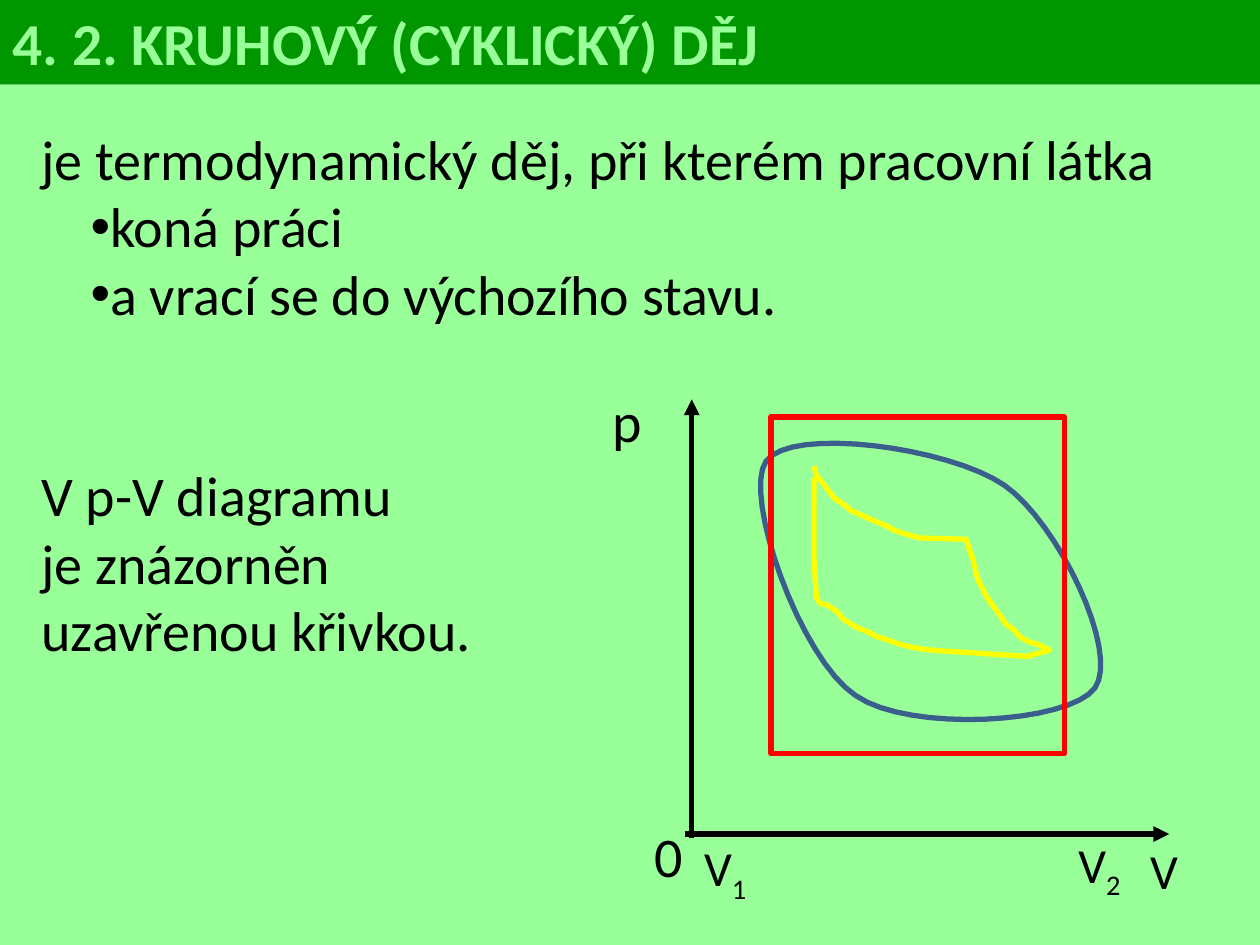
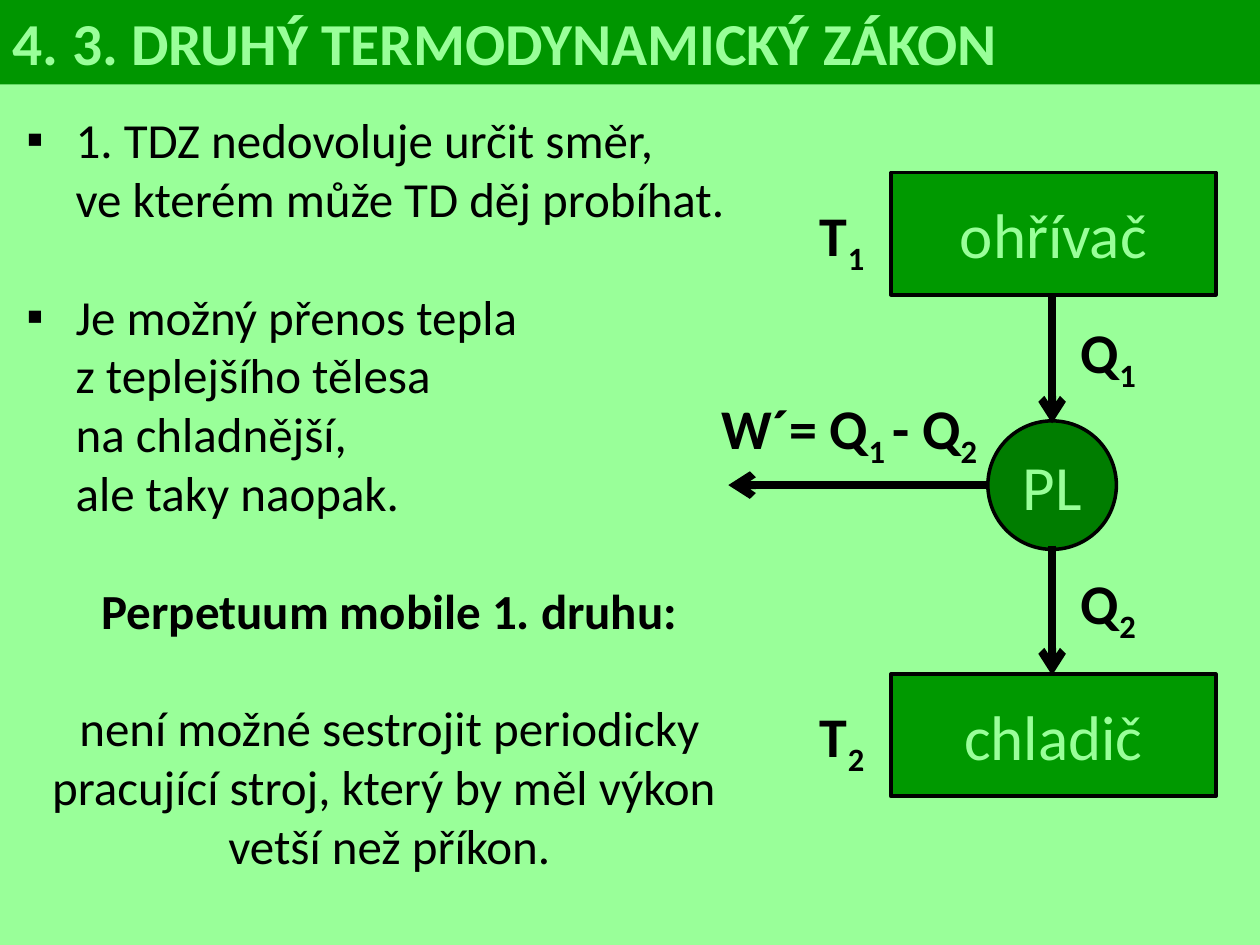
from copy import deepcopy
from dataclasses import dataclass

from lxml.etree import SubElement
from pptx import Presentation
from pptx.dml.color import RGBColor
from pptx.enum.shapes import MSO_CONNECTOR, MSO_SHAPE
from pptx.enum.text import MSO_ANCHOR, MSO_AUTO_SIZE, PP_ALIGN
from pptx.oxml.ns import qn
from pptx.util import Inches, Pt


@dataclass(frozen=True)
class Theme:
    font: str = "Calibri"
    light: str = "99FF99"
    band: str = "009600"
    box: str = "009900"
    circle: str = "007D00"
    ink: str = "000000"
    red: str = "FF0000"
    blue: str = "3A5F8C"
    yellow: str = "FFFF00"
    title: int = 34
    node: int = 36
    large: int = 32
    medium: int = 28
    leading: float = 1.2


def rgb(value):
    return RGBColor.from_string(value)


def bezier(start, curves, steps=16):
    """Points along a chain of cubic curves."""
    points = [start]
    for a, b, end in curves:
        for i in range(1, steps + 1):
            t = i / steps
            u = 1 - t
            points.append(tuple(
                u**3 * w + 3 * u * u * t * x + 3 * u * t * t * y + t**3 * z
                for w, x, y, z in zip(start, a, b, end)))
        start = end
    return points


class Deck:
    def __init__(self, theme):
        self.theme = theme
        self.prs = Presentation()
        self.prs.slide_width, self.prs.slide_height = Inches(10), Inches(7.5)
        fill = self.prs.slide_master.background.fill
        fill.solid()
        fill.fore_color.rgb = rgb(theme.light)
        self.s = None

    def style(self, p, size, color, bold=False):
        for r in p.runs:
            r.font.name, r.font.size, r.font.bold = self.theme.font, Pt(size), bold
            r.font.color.rgb = rgb(color)
        # Line breaks take the size of the text around them
        for br in p._p.findall(qn("a:br")):
            br.append(deepcopy(p.runs[0]._r.rPr))

    def outline(self, sp, color, width):
        sp.shadow.inherit = False
        sp.line.color.rgb = rgb(color)
        sp.line.width = Pt(width)

    def place(self, sp, left, top, width, height):
        sp.left, sp.top = Inches(left), Inches(top)
        sp.width, sp.height = Inches(width), Inches(height)
        tf = sp.text_frame
        tf.word_wrap, tf.auto_size = True, MSO_AUTO_SIZE.NONE
        tf.vertical_anchor = MSO_ANCHOR.TOP
        return tf

    def new_slide(self, title):
        self.s = self.prs.slides.add_slide(self.prs.slide_layouts[1])
        sp = self.s.shapes.title
        tf = self.place(sp, 0, 0, 10, 0.67)
        sp.fill.solid()
        sp.fill.fore_color.rgb = rgb(self.theme.band)
        tf.text = title
        p = tf.paragraphs[0]
        p.alignment = PP_ALIGN.LEFT
        self.style(p, self.theme.title, self.theme.light, True)

    def body(self, box, size, items):
        """Items: text, bullet, (left margin, first-line indent), lines before, options."""
        tf = self.place(self.s.placeholders[1], *box)
        for i, (text, bullet, indents, gap, options) in enumerate(items):
            p = tf.add_paragraph() if i else tf.paragraphs[0]
            p.text = text
            p.alignment = options.get("align", PP_ALIGN.LEFT)
            p.space_before = Pt(gap * size * self.theme.leading)
            pPr = p._p.get_or_add_pPr()
            for name, value in zip(("marL", "indent"), indents):
                pPr.set(name, str(Inches(value)))
            if bullet:
                SubElement(pPr, qn("a:buChar"), char=bullet)
            else:
                SubElement(pPr, qn("a:buNone"))
            self.style(p, size, self.theme.ink, options.get("bold", False))

    def label(self, text, left, top, width, size, bold=False):
        """Text between underscores is set as a subscript."""
        height = 0.1 + size * self.theme.leading / 72
        sp = self.s.shapes.add_textbox(0, 0, 0, 0)
        p = self.place(sp, left, top, width, height).paragraphs[0]
        for i, part in enumerate(text.split("_")):
            r = p.add_run()
            r.text = part
            if i % 2:
                r._r.get_or_add_rPr().set("baseline", "-25000")
        self.style(p, size, self.theme.ink, bold)

    def shape(self, kind, left, top, width, height, line, weight, fill=None, text=""):
        sp = self.s.shapes.add_shape(kind, 0, 0, 0, 0)
        tf = self.place(sp, left, top, width, height)
        self.outline(sp, line, weight)
        if fill:
            sp.fill.solid()
            sp.fill.fore_color.rgb = rgb(fill)
        else:
            sp.fill.background()
        if text:
            tf.text = text
            tf.vertical_anchor = MSO_ANCHOR.MIDDLE
            p = tf.paragraphs[0]
            p.alignment = PP_ALIGN.CENTER
            self.style(p, self.theme.node, self.theme.light)

    def node(self, kind, text, left, top, width, height, fill):
        self.shape(kind, left, top, width, height, self.theme.ink, 2, fill, text)

    def arrow(self, x1, y1, x2, y2, weight, head):
        c = self.s.shapes.add_connector(
            MSO_CONNECTOR.STRAIGHT, Inches(x1), Inches(y1), Inches(x2), Inches(y2))
        c.line.color.rgb = rgb(self.theme.ink)
        c.line.width = Pt(weight)
        SubElement(c.line._get_or_add_ln(), qn("a:tailEnd"), type=head)
        SubElement(c._element.spPr, qn("a:effectLst"))

    def curve(self, points, color, close):
        points = [(Inches(x), Inches(y)) for x, y in points]
        builder = self.s.shapes.build_freeform(*points[0])
        builder.add_line_segments(points[1:], close=close)
        sp = builder.convert_to_shape()
        sp.fill.background()
        self.outline(sp, color, 3)


def cyclic_process(deck):
    t = deck.theme
    deck.new_slide("4. 2. KRUHOVÝ (CYKLICKÝ) DĚJ")
    deck.body((0.23, 0.94, 9.2, 4.95), t.large, [
        ("je termodynamický děj, při kterém pracovní látka", "", (0, 0), 0, {}),
        ("koná práci", "•", (0, 0.39), 0, {}),
        ("a vrací se do výchozího stavu.", "•", (0, 0.39), 0, {}),
        ("V p-V diagramu \nje znázorněn \nuzavřenou křivkou.", "", (0, 0), 2, {}),
    ])

    # Axes and their labels
    deck.arrow(5.49, 6.65, 5.49, 3.17, 3, "triangle")
    deck.arrow(5.44, 6.62, 9.28, 6.62, 3, "triangle")
    deck.label("p", 4.76, 3.02, 0.53, t.large)
    deck.label("0", 5.1, 6.47, 0.54, t.large)
    for text, left, top in (("V_1", 5.49, 6.6), ("V_2", 8.46, 6.57), ("V", 9.03, 6.62)):
        deck.label(text, left, top, 0.73, t.medium)

    # Three closed cycles
    oval = bezier((6.08, 3.66), [
        ((6.28, 3.38), (7.53, 3.55), (7.97, 3.85)),
        ((8.4, 4.15), (8.89, 5.18), (8.69, 5.46)),
        ((8.49, 5.74), (7.22, 5.82), (6.79, 5.52)),
        ((6.35, 5.23), (5.89, 3.93), (6.08, 3.66)),
    ])
    deck.curve(oval, t.blue, True)
    deck.shape(MSO_SHAPE.RECTANGLE, 6.12, 3.31, 2.33, 2.67, t.red, 3)
    hand_drawn = [
        (6.46, 3.7), (6.48, 3.77), (6.62, 3.95), (6.66, 3.98), (6.72, 4.02),
        (6.75, 4.05), (6.93, 4.13), (7.05, 4.18), (7.1, 4.21), (7.16, 4.23),
        (7.3, 4.27), (7.67, 4.28), (7.7, 4.38), (7.72, 4.43), (7.75, 4.56),
        (7.77, 4.62), (7.8, 4.67), (7.82, 4.72), (7.89, 4.82), (7.95, 4.9),
        (7.98, 4.95), (8.05, 5), (8.1, 5.06), (8.18, 5.1), (8.23, 5.11),
        (8.33, 5.16), (8.15, 5.21), (8, 5.2), (7.39, 5.16), (7.25, 5.14),
        (7.13, 5.11), (7.02, 5.07), (6.95, 5.05), (6.9, 5.02), (6.8, 4.98),
        (6.7, 4.92), (6.64, 4.85), (6.56, 4.8), (6.51, 4.79), (6.48, 4.74),
        (6.46, 4.42), (6.46, 3.79),
    ]
    deck.curve(hand_drawn, t.yellow, False)


def second_law(deck):
    t = deck.theme
    deck.new_slide("4. 3. DRUHÝ TERMODYNAMICKÝ ZÁKON")
    hanging, flush = (0.39, -0.39), (0, 0)
    center = {"align": PP_ALIGN.CENTER}
    deck.body((0.11, 0.82, 5.96, 6.23), t.medium, [
        ("1. TDZ nedovoluje určit směr, \nve kterém může TD děj probíhat.",
         "▪", hanging, 0, {}),
        ("Je možný přenos tepla \nz teplejšího tělesa \nna chladnější, \nale taky naopak.",
         "▪", hanging, 1, {}),
        ("Perpetuum mobile 1. druhu:", "", flush, 1, {**center, "bold": True}),
        ("není možné sestrojit periodicky pracující stroj, "
         "který by měl výkon \nvetší než příkon.", "", flush, 1, center),
    ])

    # Heater, working substance and cooler
    for i, (text, top) in enumerate((("ohřívač", 1.37), ("chladič", 5.35)), 1):
        deck.node(MSO_SHAPE.RECTANGLE, text, 7.07, top, 2.58, 0.97, t.box)
        deck.label(f"T_{i}", 6.41, top + 0.17, 0.73, t.large, True)
    deck.node(MSO_SHAPE.OVAL, "PL", 7.84, 3.34, 1.02, 1.02, t.circle)

    # Heat flows and work
    for i, (start, end) in enumerate(((2.34, 3.36), (4.33, 5.36)), 1):
        deck.arrow(8.35, start, 8.35, end, 4.5, "arrow")
        deck.label(f"Q_{i}", 8.48, start + 0.13, 0.73, t.large, True)
    deck.arrow(7.84, 3.85, 5.78, 3.85, 4.5, "arrow")
    deck.label("W´= Q_1 _- Q_2", 5.63, 3.07, 2.72, t.large, True)


def main():
    deck = Deck(Theme())
    cyclic_process(deck)
    second_law(deck)
    deck.prs.save("out.pptx")


if __name__ == "__main__":
    main()
